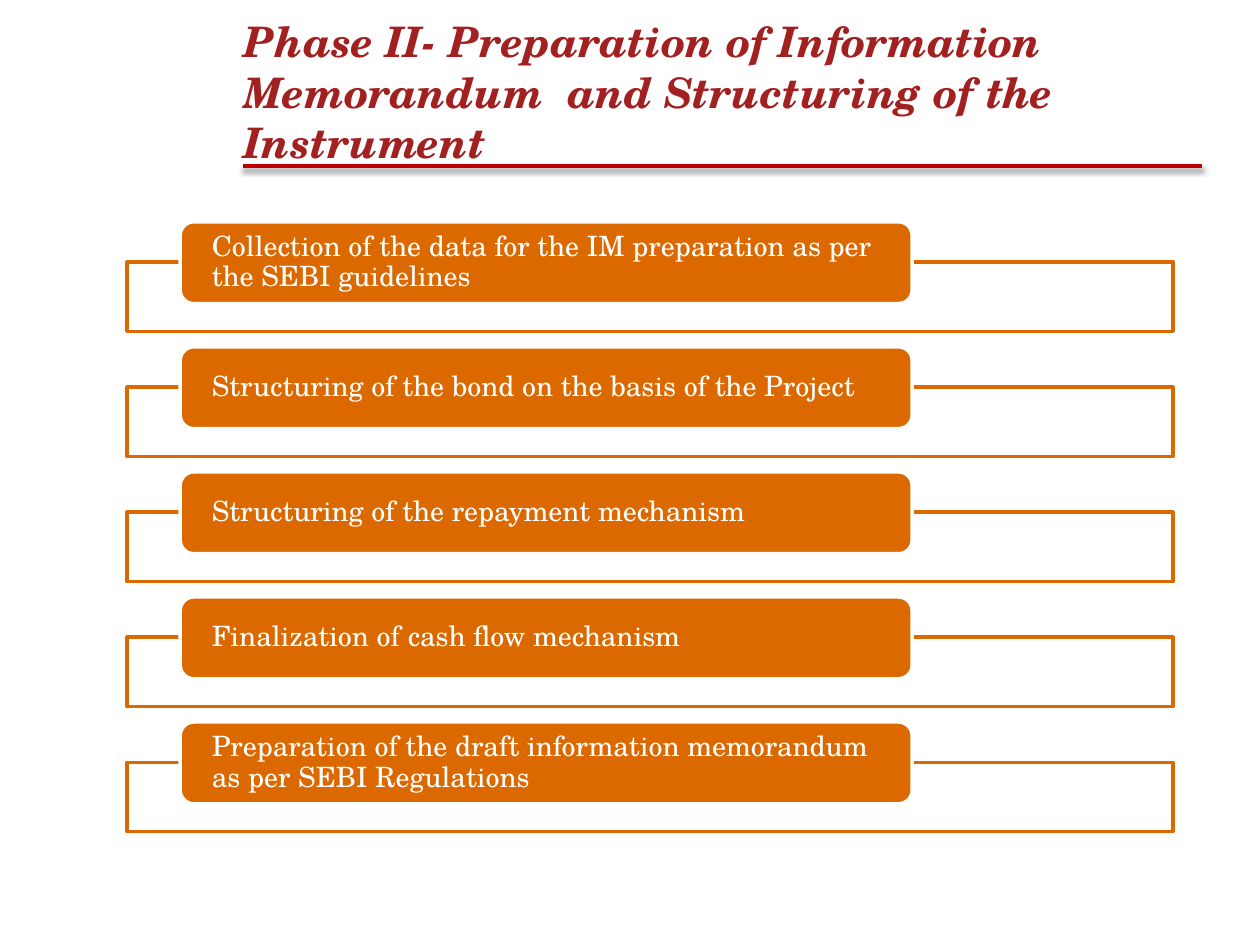
from lxml import etree
from pptx import Presentation
from pptx.dml.color import RGBColor
from pptx.enum.shapes import MSO_CONNECTOR, MSO_SHAPE
from pptx.enum.text import MSO_ANCHOR, PP_ALIGN
from pptx.oxml.ns import qn
from pptx.util import Inches, Pt

STRAIGHT = MSO_CONNECTOR.STRAIGHT
RECTANGLE, ROUNDED = MSO_SHAPE.RECTANGLE, MSO_SHAPE.ROUNDED_RECTANGLE
MIDDLE, LEFT = MSO_ANCHOR.MIDDLE, PP_ALIGN.LEFT

FONT = "TeX Gyre Schola"
COLORS = {
    "title": "A32020",
    "rule": "C00000",
    "shadow": "000000",
    "step": "DC6900",
    "white": "FFFFFF",
}
STEPS = [
    "Collection of the data for the IM preparation as per the SEBI guidelines",
    "Structuring of the bond on the basis of the Project",
    "Structuring of the repayment mechanism",
    "Finalization of cash flow mechanism",
    "Preparation of the draft information memorandum as per SEBI Regulations",
]
FIRST_TOP, LAST_TOP = 1.76, 5.73
FRAME_OFFSET = 0.32


def color(name):
    return RGBColor.from_string(COLORS[name])


def add_box(shapes, kind, position, fill, line):
    shape = shapes.add_shape(kind, *map(Inches, position))
    shape.shadow.inherit = False
    shape.fill.solid()
    shape.fill.fore_color.rgb = color(fill)
    shape.line.color.rgb = color(line)
    shape.line.width = Pt(2)
    return shape


presentation = Presentation()
presentation.slide_width = Inches(10)
presentation.slide_height = Inches(7.5)
slide = presentation.slides.add_slide(presentation.slide_layouts[6])

# Title
title = slide.shapes.add_textbox(Inches(1.93), Inches(0.24), Inches(7.91), Inches(0.97))
frame = title.text_frame
frame.word_wrap = True
frame.vertical_anchor = MIDDLE
frame.margin_left = frame.margin_right = frame.margin_top = frame.margin_bottom = 0
paragraph = frame.paragraphs[0]
paragraph.text = "Phase II- Preparation of Information Memorandum  and Structuring of the Instrument"
paragraph.font.name = FONT
paragraph.font.size = Pt(24)
paragraph.font.bold = True
paragraph.font.italic = True
paragraph.font.color.rgb = color("title")

# Rule under the title, with a soft shadow below it
rule = slide.shapes.add_connector(
    STRAIGHT, Inches(1.93), Inches(1.32), Inches(9.54), Inches(1.32)
)
rule.line.color.rgb = color("rule")
rule.line.width = Pt(2.25)
effects = etree.SubElement(rule._element.spPr, qn("a:effectLst"))
shadow = etree.SubElement(
    effects, qn("a:outerShdw"), blurRad=str(Pt(3.1)), dist=str(Pt(1.8)),
    dir="5400000", rotWithShape="0",
)
shadow_color = etree.SubElement(shadow, qn("a:srgbClr"), val=COLORS["shadow"])
etree.SubElement(shadow_color, qn("a:alpha"), val="35000")

# Steps: an outlined frame with a label over its top edge
pitch = (LAST_TOP - FIRST_TOP) / (len(STEPS) - 1)
for index, text in enumerate(STEPS):
    top = FIRST_TOP + index * pitch
    add_box(slide.shapes, RECTANGLE, (1.01, top + FRAME_OFFSET, 8.3, 0.55), "white", "step")
    label = add_box(slide.shapes, ROUNDED, (1.43, top, 5.81, 0.65), "step", "white")
    frame = label.text_frame
    frame.word_wrap = True
    frame.vertical_anchor = MIDDLE
    frame.margin_left = frame.margin_right = Inches(0.22)
    frame.margin_top = frame.margin_bottom = 0
    paragraph = frame.paragraphs[0]
    paragraph.text = text
    paragraph.alignment = LEFT
    paragraph.line_spacing = 0.9
    paragraph.font.name = FONT
    paragraph.font.size = Pt(16)
    paragraph.font.color.rgb = color("white")

presentation.save("out.pptx")
